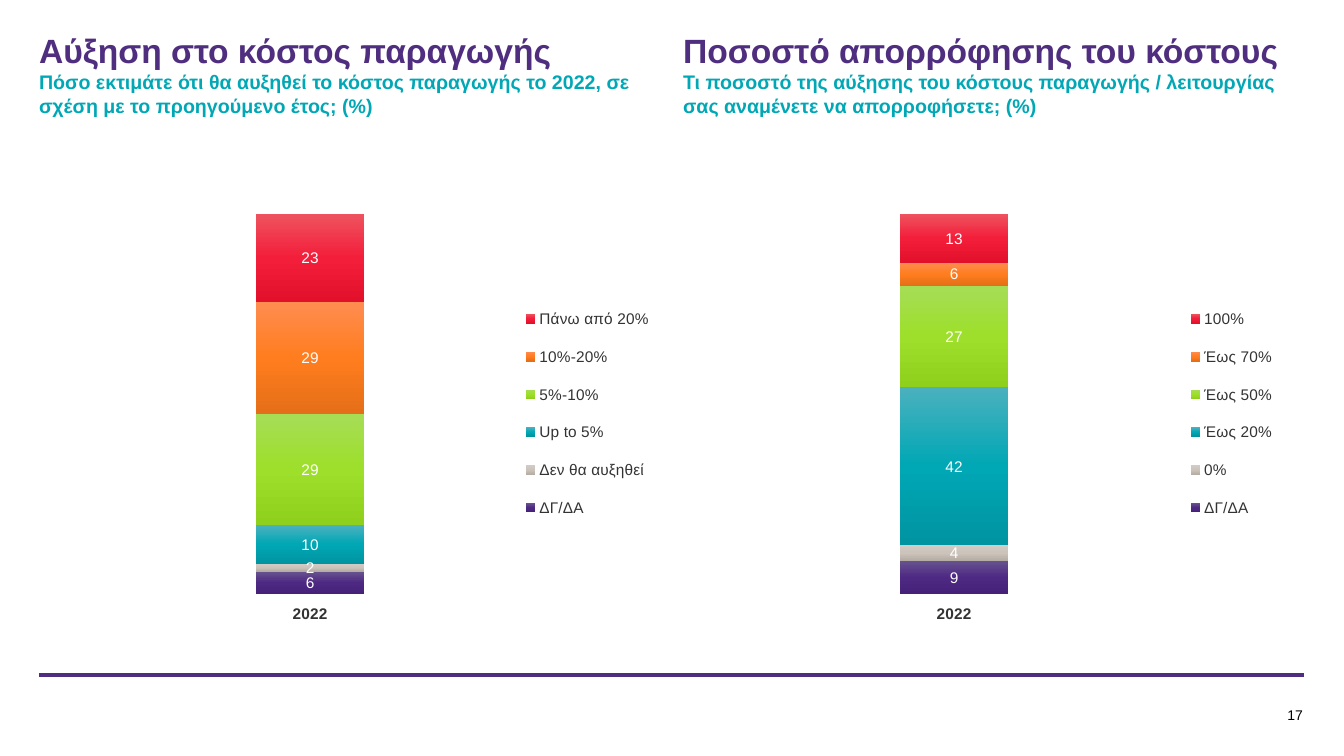
from lxml import etree
from pptx import Presentation
from pptx.chart.data import CategoryChartData
from pptx.dml.color import RGBColor
from pptx.enum.chart import XL_CHART_TYPE, XL_LABEL_POSITION, XL_LEGEND_POSITION, XL_TICK_MARK
from pptx.enum.shapes import MSO_CONNECTOR
from pptx.enum.text import MSO_ANCHOR, PP_ALIGN
from pptx.oxml import parse_xml
from pptx.oxml.ns import nsdecls, qn
from pptx.util import Emu, Pt

STACKED_100 = XL_CHART_TYPE.COLUMN_STACKED_100
LABEL_CENTER = XL_LABEL_POSITION.CENTER
LEGEND_RIGHT = XL_LEGEND_POSITION.RIGHT
TICK_OUTSIDE = XL_TICK_MARK.OUTSIDE
STRAIGHT = MSO_CONNECTOR.STRAIGHT
ANCHOR_TOP, ANCHOR_MIDDLE = MSO_ANCHOR.TOP, MSO_ANCHOR.MIDDLE
ALIGN_LEFT, ALIGN_RIGHT = PP_ALIGN.LEFT, PP_ALIGN.RIGHT

SLIDE_WIDTH, SLIDE_HEIGHT = 1344, 756
EMU_PER_PX = 12192000 / SLIDE_WIDTH
FONT = "Arial"
COLORS = {
    "purple": "4F2D7F",
    "teal": "00A7B5",
    "text": "333333",
    "white": "FFFFFF",
    "black": "000000",
}
GRADIENTS = {
    "purple": ("68548F", "4E2983", "452178"),
    "stone": ("D2CCC5", "CCC4BB", "B6AEA5"),
    "teal": ("4BB1BE", "00A7B5", "0094A1"),
    "green": ("A6DD57", "9DDF2A", "8ED01C"),
    "orange": ("FF8C50", "FF7D1E", "E56F18"),
    "red": ("EE535F", "F31E3A", "E2102B"),
}
COLUMN_WIDTH = 620
PLOT_LAYOUT = (0, 0.107, 0.875, 0.817)
PANELS = [
    {
        "left": 39,
        "title": "Αύξηση στο κόστος παραγωγής",
        "question": "Πόσο εκτιμάτε ότι θα αυξηθεί το κόστος παραγωγής το 2022, "
                    "σε σχέση με το προηγούμενο έτος; (%)",
        "answers": [("ΔΓ/ΔΑ", 6), ("Δεν θα αυξηθεί", 2), ("Up to 5%", 10),
                    ("5%-10%", 29), ("10%-20%", 29), ("Πάνω από 20%", 23)],
        "legend": (0.78, 0.27, 0.21, 0.53),
    },
    {
        "left": 683,
        "title": "Ποσοστό απορρόφησης του κόστους",
        "question": "Τι ποσοστό της αύξησης του κόστους παραγωγής / λειτουργίας "
                    "σας αναμένετε να απορροφήσετε; (%)",
        "answers": [("ΔΓ/ΔΑ", 9), ("0%", 4), ("Έως 20%", 42),
                    ("Έως 50%", 27), ("Έως 70%", 6), ("100%", 13)],
        "legend": (0.81, 0.27, 0.15, 0.53),
    },
]


def px(length):
    return Emu(round(length * EMU_PER_PX))


def style_font(font, size, color, bold=False):
    font.name = FONT
    font.size = Pt(size)
    font.bold = bold
    font.color.rgb = RGBColor.from_string(COLORS[color])


def add_text(slide, box, lines, align=ALIGN_LEFT, anchor=ANCHOR_TOP):
    shape = slide.shapes.add_textbox(*map(px, box))
    frame = shape.text_frame
    frame.word_wrap = True
    frame.vertical_anchor = anchor
    frame.margin_left = frame.margin_right = frame.margin_top = frame.margin_bottom = 0
    for index, (text, size, color, bold) in enumerate(lines):
        paragraph = frame.add_paragraph() if index else frame.paragraphs[0]
        paragraph.alignment = align
        run = paragraph.add_run()
        run.text = text
        style_font(run.font, size, color, bold)


def add_rule(slide, left, right, y):
    rule = slide.shapes.add_connector(STRAIGHT, px(left), px(y), px(right), px(y))
    rule.line.color.rgb = RGBColor.from_string(COLORS["purple"])
    rule.line.width = Pt(3)
    etree.SubElement(rule._element.spPr, qn("a:effectLst"))


def set_layout(parent, index, bounds, inner=False):
    for existing in parent.findall(qn("c:layout")):
        parent.remove(existing)
    target = '<c:layoutTarget val="inner"/>' if inner else ""
    modes = '<c:xMode val="edge"/><c:yMode val="edge"/>'
    values = "".join(f'<c:{name} val="{value}"/>' for name, value in zip("xywh", bounds))
    parent.insert(index, parse_xml(
        f'<c:layout {nsdecls("c")}><c:manualLayout>{target}{modes}{values}'
        '</c:manualLayout></c:layout>'))


def fill_gradient(series, colors):
    stops = "".join(
        f'<a:gs pos="{position * 50000}"><a:srgbClr val="{color}"/></a:gs>'
        for position, color in enumerate(colors))
    series.format.line.fill.background()
    series._element.get_or_add_spPr().insert(0, parse_xml(
        f'<a:gradFill {nsdecls("a")} rotWithShape="1"><a:gsLst>{stops}</a:gsLst>'
        '<a:lin ang="5400000" scaled="0"/></a:gradFill>'))


def style_series(series, colors):
    fill_gradient(series, colors)
    labels = series.data_labels
    labels.show_value = True
    labels.number_format = "0"
    labels.number_format_is_linked = False
    labels.position = LABEL_CENTER
    style_font(labels.font, 11, "white")


def style_axes(chart):
    category_axis = chart.category_axis
    category_axis.major_tick_mark = TICK_OUTSIDE
    category_axis.format.line.fill.background()
    style_font(category_axis.tick_labels.font, 11, "text", True)
    chart.value_axis.has_major_gridlines = False
    chart.value_axis.visible = False


def add_answer_chart(slide, box, answers, legend_layout):
    data = CategoryChartData(number_format="0")
    data.categories = ["2022"]
    for name, value in answers:
        data.add_series(name, [value])
    chart = slide.shapes.add_chart(STACKED_100, *map(px, box), data).chart
    chart.has_title = False
    style_font(chart.font, 10, "text")
    style_axes(chart)
    plot = chart.plots[0]
    plot.gap_width = 400
    plot.overlap = 100
    plot.vary_by_categories = False
    for series, colors in zip(plot.series, GRADIENTS.values()):
        style_series(series, colors)
    chart.has_legend = True
    legend = chart.legend
    legend.position = LEGEND_RIGHT
    legend.include_in_layout = False
    style_font(legend.font, 11, "text")
    set_layout(legend._element, 1, legend_layout)
    set_layout(chart._chartSpace.chart.plotArea, 0, PLOT_LAYOUT, inner=True)


def add_panel(slide, panel):
    left = panel["left"]
    heading = [(panel["title"], 24, "purple", True), (panel["question"], 14, "teal", True)]
    add_text(slide, (left, 30, COLUMN_WIDTH, 85), heading)
    add_answer_chart(slide, (left, 164, COLUMN_WIDTH, 466), panel["answers"], panel["legend"])


def main():
    presentation = Presentation()
    presentation.slide_width = px(SLIDE_WIDTH)
    presentation.slide_height = px(SLIDE_HEIGHT)
    slide = presentation.slides.add_slide(presentation.slide_layouts[6])
    add_rule(slide, 39, 1304, 675)
    for panel in PANELS:
        add_panel(slide, panel)
    add_text(slide, (1196, 704, 107, 22), [("17", 10, "black", False)],
             ALIGN_RIGHT, ANCHOR_MIDDLE)
    presentation.save("out.pptx")


if __name__ == "__main__":
    main()
